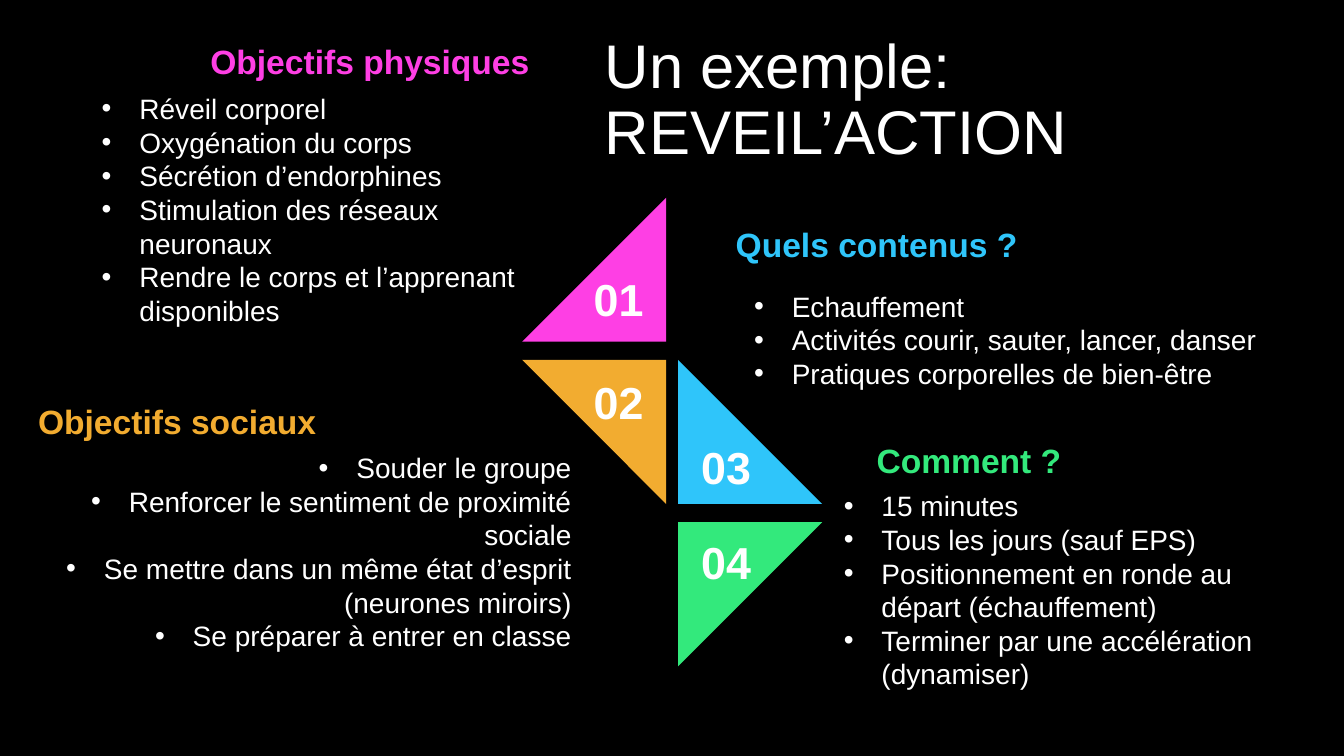
from collections import namedtuple
from dataclasses import dataclass

from pptx import Presentation
from pptx.dml.color import RGBColor
from pptx.enum import shapes, text
from pptx.oxml import xmlchemy
from pptx.util import Cm, Pt

Box = namedtuple("Box", "left top width height")
Topic = namedtuple("Topic", "heading color heading_box items list_box align")
Tile = namedtuple("Tile", "column row rotation color number_dx number_dy")


@dataclass(frozen=True)
class Theme:
    font: str = "Arial"
    background: str = "000000"
    ink: str = "FFFFFF"
    pink: str = "FE3FE4"
    orange: str = "F2AC30"
    blue: str = "2FC5FA"
    green: str = "33E97C"
    title_size: int = 44
    number_size: int = 32
    heading_size: int = 24
    list_size: int = 20


THEME = Theme()
LEFT, RIGHT = text.PP_ALIGN.LEFT, text.PP_ALIGN.RIGHT
BULLET_INDENT = Cm(0.95)

TOPICS = [
    Topic("Objectifs physiques", THEME.pink, Box(5.05, 0.91, 9.93, 1.27),
          ["Réveil corporel", "Oxygénation du corps", "Sécrétion d’endorphines",
           "Stimulation des réseaux neuronaux",
           "Rendre le corps et l’apprenant disponibles"],
          Box(2.31, 2.18, 12.37, 6.25), LEFT),
    Topic("Objectifs sociaux", THEME.orange, Box(0.71, 9.98, 11.28, 1.27),
          ["Souder le groupe", "Renforcer le sentiment de proximité sociale",
           "Se mettre dans un même état d’esprit (neurones miroirs)",
           "Se préparer à entrer en classe"],
          Box(0.69, 11.23, 13.97, 5.38), RIGHT),
    Topic("Quels contenus ?", THEME.blue, Box(18.29, 5.51, 11.28, 1.27),
          ["Echauffement", "Activités courir, sauter, lancer, danser",
           "Pratiques corporelles de bien-être"],
          Box(18.75, 7.16, 13.31, 2.82), LEFT),
    Topic("Comment ?", THEME.green, Box(21.84, 10.97, 11.28, 1.27),
          ["15 minutes", "Tous les jours (sauf EPS)",
           "Positionnement en ronde au départ (échauffement)",
           "Terminer par une accélération (dynamiser)"],
          Box(21.01, 12.19, 12.24, 5.89), LEFT),
]

TILES = [
    Tile(0, 0, 270, THEME.pink, 1.02, 1.73),
    Tile(0, 1, 180, THEME.orange, 1.02, 0.25),
    Tile(1, 1, 0, THEME.blue, -0.2, 1.88),
    Tile(1, 2, 90, THEME.green, -0.2, 0.2),
]


def place(part, box):
    part.left, part.top, part.width, part.height = (Cm(length) for length in box)


def style_paragraph(paragraph, size, color, bold=False, align=LEFT):
    paragraph.alignment = align
    for run in paragraph.runs:
        run.font.name = THEME.font
        run.font.size = Pt(size)
        run.font.bold = bold
        run.font.color.rgb = RGBColor.from_string(color)


def add_bullet(paragraph):
    properties = paragraph._p.get_or_add_pPr()
    properties.set("marL", str(BULLET_INDENT))
    properties.set("indent", str(-BULLET_INDENT))
    font = xmlchemy.OxmlElement("a:buFont")
    font.set("typeface", THEME.font)
    bullet = xmlchemy.OxmlElement("a:buChar")
    bullet.set("char", "•")
    properties.extend([font, bullet])


def add_label(slide, box, wording, size, color, align=LEFT):
    label = slide.shapes.add_textbox(*(Cm(length) for length in box))
    frame = label.text_frame
    frame.word_wrap = True
    frame.auto_size = text.MSO_AUTO_SIZE.SHAPE_TO_FIT_TEXT
    frame.text = wording
    style_paragraph(frame.paragraphs[0], size, color, True, align)


def fill_title(title, box):
    place(title, box)
    frame = title.text_frame
    frame.text = "Un exemple: REVEIL’ACTION"
    frame.word_wrap = True
    frame.auto_size = text.MSO_AUTO_SIZE.NONE
    frame.vertical_anchor = text.MSO_ANCHOR.MIDDLE
    frame.paragraphs[0].line_spacing = 0.9
    style_paragraph(frame.paragraphs[0], THEME.title_size, THEME.ink)


def fill_topic(slide, body, topic):
    add_label(slide, topic.heading_box, topic.heading, THEME.heading_size, topic.color)
    place(body, topic.list_box)
    frame = body.text_frame
    frame.text = "\n".join(topic.items)
    frame.word_wrap = True
    frame.auto_size = text.MSO_AUTO_SIZE.NONE
    frame.vertical_anchor = text.MSO_ANCHOR.TOP
    for paragraph in frame.paragraphs:
        paragraph.line_spacing = 1.0
        paragraph.space_before = Pt(0)
        style_paragraph(paragraph, THEME.list_size, THEME.ink, align=topic.align)
        add_bullet(paragraph)


def add_pinwheel(slide, box):
    side = 3.63
    column_step, row_step = box.width - side, (box.height - side) / 2
    for number, tile in enumerate(TILES, 1):
        left = box.left + tile.column * column_step
        top = box.top + tile.row * row_step
        triangle = slide.shapes.add_shape(
            shapes.MSO_SHAPE.RIGHT_TRIANGLE, Cm(left), Cm(top), Cm(side), Cm(side))
        triangle.rotation = tile.rotation
        triangle.shadow.inherit = False
        triangle.fill.solid()
        triangle.fill.fore_color.rgb = RGBColor.from_string(tile.color)
        triangle.line.fill.background()
        number_box = Box(left + tile.number_dx, top + tile.number_dy, 2.82, 1.63)
        add_label(slide, number_box, f"{number:02}", THEME.number_size, THEME.ink,
                  text.PP_ALIGN.CENTER)


def main():
    deck = Presentation()
    deck.slide_width, deck.slide_height = Cm(33.87), Cm(19.05)
    # The comparison layout holds a title and four bodies
    slide = deck.slides.add_slide(deck.slide_layouts.get_by_name("Comparison"))
    slide.background.fill.solid()
    slide.background.fill.fore_color.rgb = RGBColor.from_string(THEME.background)

    # Title
    fill_title(slide.shapes.title, Box(14.99, 0.69, 18.06, 3.73))
    # Numbered triangles in the centre
    add_pinwheel(slide, Box(13.16, 4.98, 7.56, 11.81))
    # Four topics around them
    for index, topic in enumerate(TOPICS, 1):
        fill_topic(slide, slide.placeholders[index], topic)

    deck.save("out.pptx")


if __name__ == "__main__":
    main()
